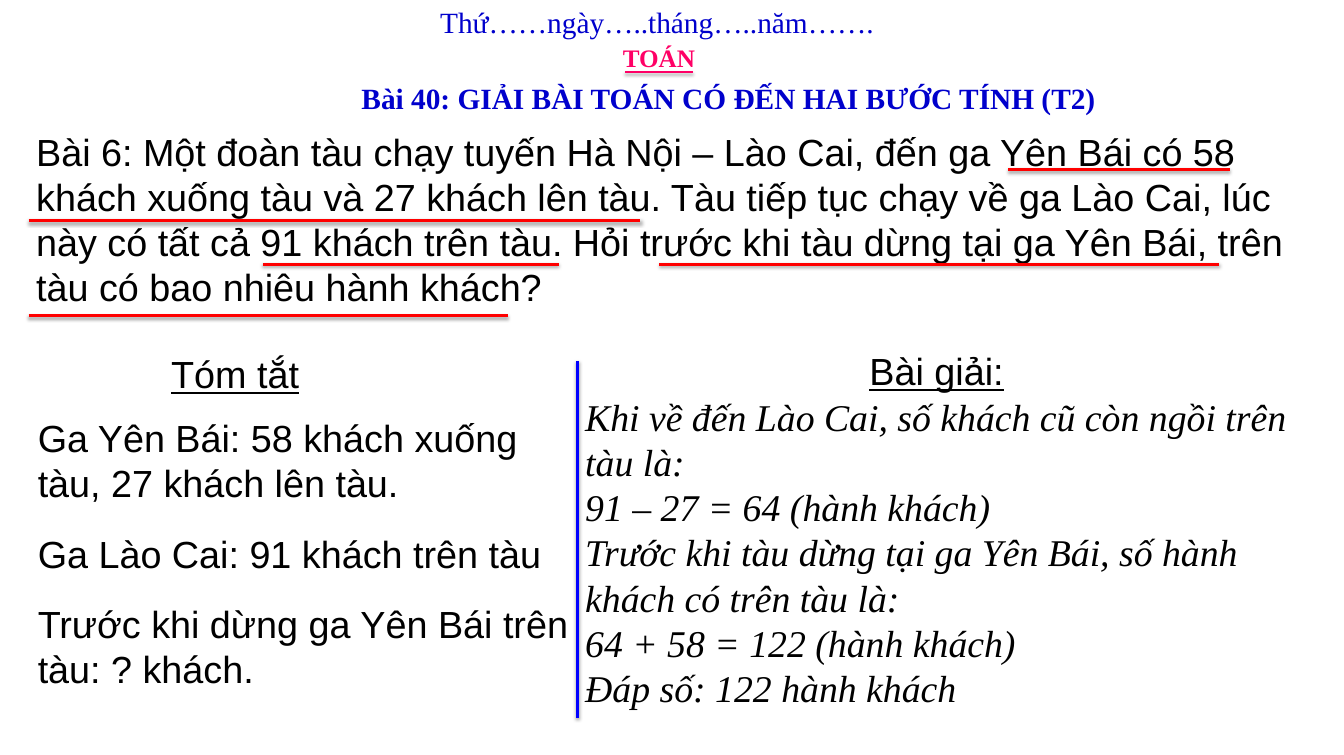
from lxml.etree import SubElement
from pptx import Presentation
from pptx.dml.color import RGBColor
from pptx.enum.shapes import MSO_CONNECTOR
from pptx.enum.text import MSO_ANCHOR, MSO_AUTO_SIZE, PP_ALIGN
from pptx.oxml.ns import qn
from pptx.util import Pt

THEME = {
    "serif": "Times New Roman", "sans": "Arial",
    "small": 24, "heading": 28, "body": 36,
    "blue": "0000CC", "pink": "FF0066", "black": "000000",
    "red": "FF0000", "divider": "0000FF",
}


def style(font, size, color, **extra):
    return {"name": THEME[font], "size": Pt(THEME[size]),
            "color": THEME[color], **extra}


DATE = style("serif", "heading", "blue")
SUBJECT = style("serif", "small", "pink", bold=True)
LESSON = style("serif", "heading", "blue", bold=True)
PLAIN = style("sans", "body", "black")
CAPTION = style("sans", "body", "black", underline=True)
ANSWER = style("serif", "body", "black", italic=True)

SLIDE_SIZE = (1281.6, 720)
TITLE = ("Bài 40: GIẢI BÀI TOÁN CÓ ĐẾN HAI BƯỚC TÍNH (T2)",
         (322.6, 70.6, 743.8, 45.4))
PROBLEM = (
    "Bài 6: Một đoàn tàu chạy tuyến Hà Nội – Lào Cai, đến ga Yên Bái có 58 "
    "khách xuống tàu và 27 khách lên tàu. Tàu tiếp tục chạy về ga Lào Cai, "
    "lúc này có tất cả 91 khách trên tàu. Hỏi trước khi tàu dừng tại ga "
    "Yên Bái, trên tàu có bao nhiêu hành khách?"
)
# text, style, (left, top, width, height), wrap, centred
TEXT_BOXES = [
    ("Thứ……ngày…..tháng…..năm…….", DATE, (412.6, 0, 432.7, 41), False, False),
    ("TOÁN", SUBJECT, (586.8, 36.7, 84.2, 36), False, False),
    (PROBLEM, PLAIN, (27.4, 118.8, 1240.6, 181.4), True, False),
    ("Tóm tắt", CAPTION, (155.5, 331.2, 137.5, 51.1), False, True),
]
SUMMARY_AREA = (28.8, 391.7, 527.8, 273.6)
SUMMARY = [
    "Ga Yên Bái: 58 khách xuống tàu, 27 khách lên tàu.",
    "Ga Lào Cai: 91 khách trên tàu",
    "Trước khi dừng ga Yên Bái trên tàu: ? khách.",
]
SOLUTION_AREA = (550.8, 328.3, 684.7, 356.4)
SOLUTION_CAPTION = "Bài giải:"
SOLUTION = [
    "Khi về đến Lào Cai, số khách cũ còn ngồi trên tàu là:",
    "91 – 27 = 64 (hành khách)",
    "Trước khi tàu dừng tại ga Yên Bái, số hành khách có trên tàu là:",
    "64 + 58 = 122 (hành khách)",
    "Đáp số: 122 hành khách",
]
# (start x, end x, y) of the strokes under the key phrases
KEY_PHRASES = [
    (961.2, 1172.9, 162), (27.4, 610.6, 210.2), (250.6, 532.8, 252),
    (628.6, 1162.8, 252), (27.4, 484.6, 301),
]
LINES = [((596.2, 69.1, 661, 69.1), "pink", 2)]
LINES += [((start, y, end, y), "red", 3) for start, end, y in KEY_PHRASES]
LINES += [((550.8, 344.2, 550.8, 684.7), "divider", 3)]


def set_format(target, values):
    for name, value in values.items():
        setattr(target, name, value)


def write(para, text, look):
    span = para.add_run()
    span.text = text
    set_format(span.font, {k: v for k, v in look.items() if k != "color"})
    span.font.color.rgb = RGBColor.from_string(look["color"])


def place(shape, area):
    set_format(shape, dict(zip(("left", "top", "width", "height"), map(Pt, area))))


def fill_placeholder(shape, area, paragraphs, gap=0):
    """Write (text, style, alignment) paragraphs, unbulleted and top-anchored."""
    place(shape, area)
    frame = shape.text_frame
    set_format(frame, {"word_wrap": True, "auto_size": MSO_AUTO_SIZE.NONE,
                       "vertical_anchor": MSO_ANCHOR.TOP})
    for index, (text, look, alignment) in enumerate(paragraphs):
        para = frame.add_paragraph() if index else frame.paragraphs[0]
        set_format(para, {"alignment": alignment, "space_after": Pt(gap),
                          "space_before": Pt(gap if index else 0)})
        properties = para._p.get_or_add_pPr()
        properties.set("marL", "0")
        properties.set("indent", "0")
        SubElement(properties, qn("a:buNone"))
        write(para, text, look)


def add_text(page, text, look, area, wrap, centred):
    box = page.shapes.add_textbox(*map(Pt, area))
    frame = box.text_frame
    set_format(frame, {"word_wrap": wrap, "auto_size": MSO_AUTO_SIZE.SHAPE_TO_FIT_TEXT})
    para = frame.paragraphs[0]
    para.alignment = PP_ALIGN.CENTER if centred else PP_ALIGN.LEFT
    write(para, text, look)


def add_line(page, ends, color, width):
    """Draw a straight line with a soft shadow below it."""
    line = page.shapes.add_connector(MSO_CONNECTOR.STRAIGHT, *map(Pt, ends))
    line.line.color.rgb = RGBColor.from_string(THEME[color])
    line.line.width = Pt(width)
    effects = SubElement(line._element.spPr, qn("a:effectLst"))
    shadow = SubElement(effects, qn("a:outerShdw"), blurRad=str(Pt(3.1)),
                        dist=str(Pt(1.8)), dir="5400000", rotWithShape="0")
    tint = SubElement(shadow, qn("a:srgbClr"), val=THEME["black"])
    SubElement(tint, qn("a:alpha"), val="35000")


def main():
    deck = Presentation()
    deck.slide_width, deck.slide_height = map(Pt, SLIDE_SIZE)
    page = deck.slides.add_slide(deck.slide_layouts.get_by_name("Two Content"))
    title, summary, solution = page.placeholders

    text, area = TITLE
    fill_placeholder(title, area, [(text, LESSON, PP_ALIGN.CENTER)])
    set_format(title.text_frame, {
        "margin_left": Pt(11.5), "margin_right": Pt(11.5),
        "margin_top": Pt(5.8), "margin_bottom": Pt(5.8)})
    fill_placeholder(summary, SUMMARY_AREA,
                     [(item, PLAIN, PP_ALIGN.LEFT) for item in SUMMARY], gap=12)
    fill_placeholder(solution, SOLUTION_AREA,
                     [(SOLUTION_CAPTION, CAPTION, PP_ALIGN.CENTER)]
                     + [(step, ANSWER, PP_ALIGN.LEFT) for step in SOLUTION])

    for entry in TEXT_BOXES:
        add_text(page, *entry)
    for entry in LINES:
        add_line(page, *entry)
    deck.save("out.pptx")


if __name__ == "__main__":
    main()
